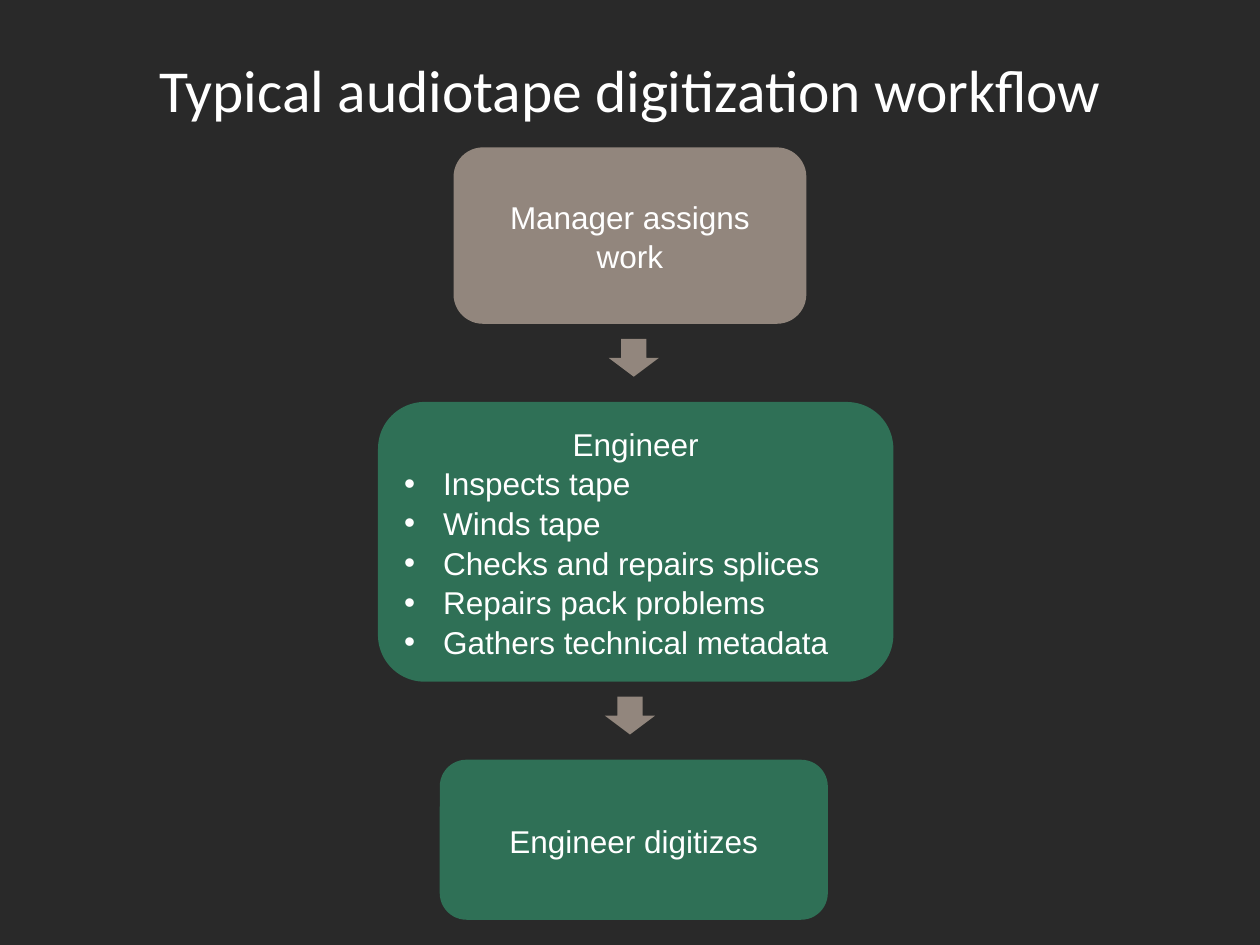
from lxml import etree
from pptx import Presentation
from pptx.dml.color import RGBColor
from pptx.enum.shapes import MSO_SHAPE
from pptx.enum.text import MSO_ANCHOR, PP_ALIGN
from pptx.oxml import parse_xml
from pptx.oxml.ns import nsdecls, qn
from pptx.util import Inches, Pt

BACKGROUND = RGBColor(0x29, 0x29, 0x29)
WHITE = RGBColor(0xFF, 0xFF, 0xFF)
TAUPE = RGBColor(0x9E, 0x91, 0x87)
GREEN = RGBColor(0x30, 0x78, 0x5B)

TITLE_SHADOW = (
    f'<a:effectLst {nsdecls("a")}>'
    '<a:outerShdw blurRad="38100" dist="38100" dir="2700000" algn="tl">'
    '<a:srgbClr val="000000"><a:alpha val="43000"/></a:srgbClr>'
    '</a:outerShdw></a:effectLst>'
)


class WorkflowSlide:
    title_font, body_font = "Calibri", "Arial"
    title_size, body_size = Pt(34), Pt(18)
    opacity = 90
    bullet_indent = Inches(0.31)

    def __init__(self, prs):
        self.s = prs.slides.add_slide(prs.slide_layouts[5])
        fill = self.s.background.fill
        fill.solid()
        fill.fore_color.rgb = BACKGROUND

    def add_run(self, p, text, font, size):
        r = p.add_run()
        r.text = text
        r.font.name, r.font.size = font, size
        r.font.color.rgb = WHITE
        return r

    def title(self, text, x, y, w, h):
        sp = self.s.shapes.title
        sp.left, sp.top, sp.width, sp.height = map(Inches, (x, y, w, h))
        tf = sp.text_frame
        tf.vertical_anchor = MSO_ANCHOR.MIDDLE
        p = tf.paragraphs[0]
        p.alignment = PP_ALIGN.CENTER
        r = self.add_run(p, text, self.title_font, self.title_size)
        r.font.fill._xPr.find(qn("a:solidFill")).addnext(parse_xml(TITLE_SHADOW))

    def shape(self, kind, color, x, y, w, h):
        sp = self.s.shapes.add_shape(kind, *map(Inches, (x, y, w, h)))
        sp.shadow.inherit = False
        sp.line.fill.background()
        sp.fill.solid()
        sp.fill.fore_color.rgb = color
        clr = sp.fill._xPr.find(qn("a:solidFill"))[0]
        etree.SubElement(clr, qn("a:alpha"), val=str(self.opacity * 1000))
        return sp

    def step(self, heading, color, x, y, w, h, tasks=()):
        tf = self.shape(MSO_SHAPE.ROUNDED_RECTANGLE, color, x, y, w, h).text_frame
        tf.word_wrap = True
        tf.vertical_anchor = MSO_ANCHOR.MIDDLE
        for i, text in enumerate([heading, *tasks]):
            p = tf.add_paragraph() if i else tf.paragraphs[0]
            p.alignment = PP_ALIGN.LEFT if i else PP_ALIGN.CENTER
            p.line_spacing = 1.05
            if i:
                self.bullet(p)
            self.add_run(p, text, self.body_font, self.body_size)

    def bullet(self, p):
        pPr = p._p.get_or_add_pPr()
        pPr.set("marL", str(self.bullet_indent))
        pPr.set("indent", str(-self.bullet_indent))
        etree.SubElement(pPr, qn("a:buFont"), typeface=self.body_font)
        etree.SubElement(pPr, qn("a:buChar"), char="•")

    def arrow(self, x, y):
        self.shape(MSO_SHAPE.DOWN_ARROW, TAUPE, x, y, 0.4, 0.3)


def main():
    prs = Presentation()
    prs.slide_width, prs.slide_height = Inches(10), Inches(7.5)

    slide = WorkflowSlide(prs)
    slide.title("Typical audiotape digitization workflow", 0.5, 0.11, 9, 1.19)
    slide.step("Manager assigns work", TAUPE, 3.6, 1.17, 2.8, 1.4)
    slide.step("Engineer", GREEN, 3, 3.19, 4.09, 2.22, tasks=[
        "Inspects tape",
        "Winds tape",
        "Checks and repairs splices",
        "Repairs pack problems",
        "Gathers technical metadata",
    ])
    slide.step("Engineer digitizes", GREEN, 3.49, 6.03, 3.08, 1.27)
    slide.arrow(4.83, 2.69)
    slide.arrow(4.8, 5.53)

    prs.save("out.pptx")


if __name__ == "__main__":
    main()
